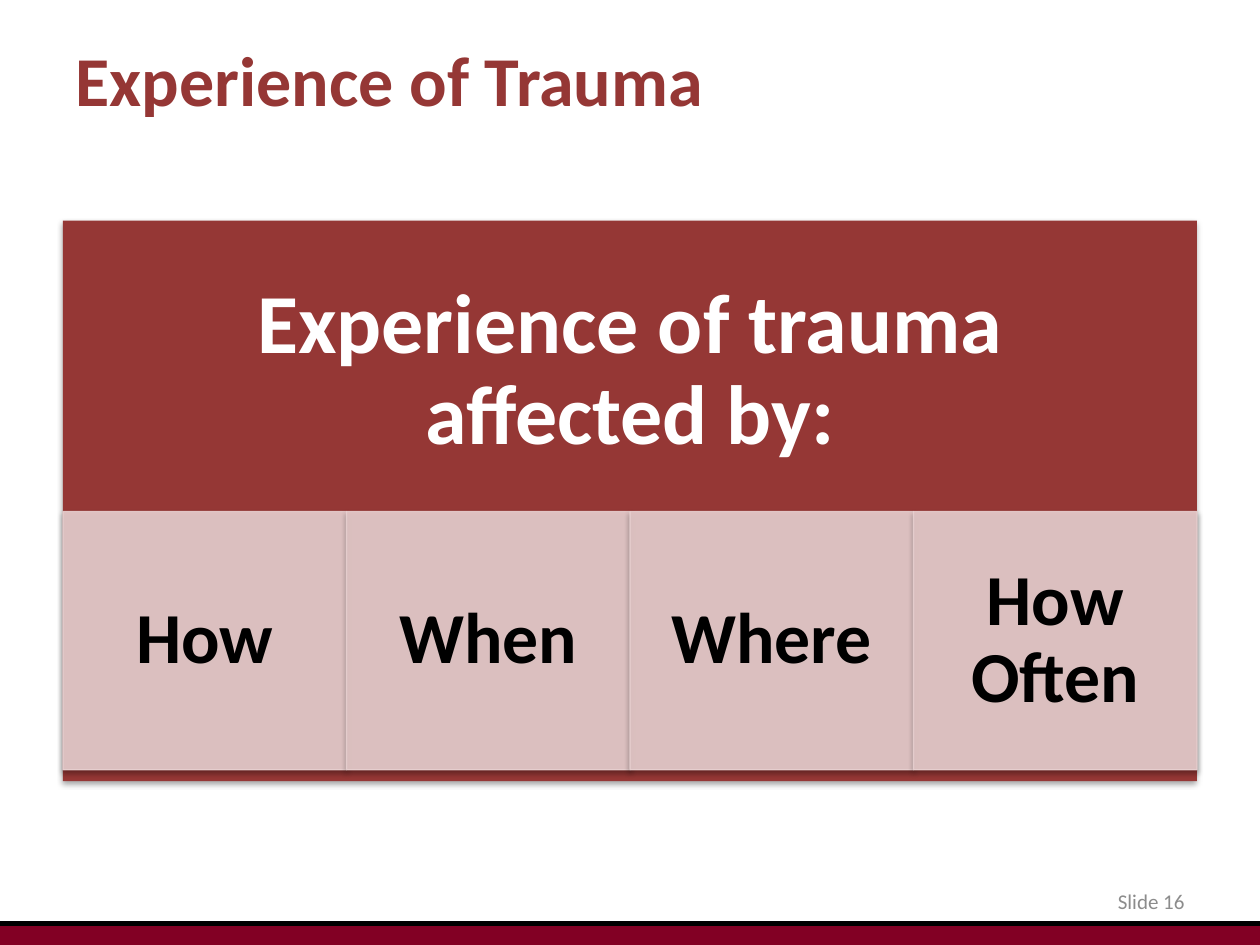
from dataclasses import dataclass

from lxml import etree
from pptx import Presentation
from pptx.dml.color import RGBColor
from pptx.enum.shapes import MSO_CONNECTOR, MSO_SHAPE
from pptx.enum.text import MSO_ANCHOR, PP_ALIGN
from pptx.oxml.ns import qn
from pptx.util import Emu, Pt

RECT = MSO_SHAPE.RECTANGLE
STRAIGHT = MSO_CONNECTOR.STRAIGHT
MIDDLE = MSO_ANCHOR.MIDDLE
LEFT, CENTER, RIGHT = PP_ALIGN.LEFT, PP_ALIGN.CENTER, PP_ALIGN.RIGHT
PX = 9144  # 100 px to the inch
TITLE_ONLY = 5


@dataclass(frozen=True)
class Theme:
    font: str = "Calibri"
    red: str = "953735"
    pink: str = "E8D0D0"
    maroon: str = "820024"
    white: str = "FFFFFF"
    black: str = "000000"
    gray: str = "8C8C8C"
    title_pt: int = 40
    heading_pt: int = 48
    factor_pt: int = 41
    number_pt: int = 12


@dataclass(frozen=True)
class Box:
    left: int
    top: int
    width: int
    height: int

    def emu(self) -> list[Emu]:
        return [Emu(n * PX) for n in (self.left, self.top, self.width, self.height)]


@dataclass(frozen=True)
class TextStyle:
    size: int
    color: str
    bold: bool = True
    align: PP_ALIGN = CENTER
    spacing: float = 0.9
    inset_x: int = 10
    inset_y: int = 5


THEME = Theme()
TITLE = TextStyle(THEME.title_pt, THEME.red, align=LEFT, spacing=1.0)
HEADING = TextStyle(THEME.heading_pt, THEME.white, inset_x=37, inset_y=37)
FACTOR = TextStyle(THEME.factor_pt, THEME.black, inset_x=32, inset_y=6)
NUMBER = TextStyle(THEME.number_pt, THEME.gray, bold=False, align=RIGHT, spacing=1.0)

PANEL = Box(50, 175, 900, 445)
FACTORS = ("How", "When", "Where", "How Often")
FACTOR_TOP, FACTOR_HEIGHT = 406, 205
FOOTER = Box(0, 733, 1000, 17)


def write(sp, text: str, style: TextStyle) -> None:
    tf = sp.text_frame
    tf.text = text
    tf.word_wrap = True
    tf.vertical_anchor = MIDDLE
    tf.margin_left = tf.margin_right = Emu(style.inset_x * PX)
    tf.margin_top = tf.margin_bottom = Emu(style.inset_y * PX)
    p = tf.paragraphs[0]
    p.alignment = style.align
    p.line_spacing = style.spacing
    font = p.runs[0].font
    font.name, font.size, font.bold = THEME.font, Pt(style.size), style.bold
    font.color.rgb = RGBColor.from_string(style.color)


def add_text(slide, box: Box, text: str, style: TextStyle) -> None:
    write(slide.shapes.add_textbox(*box.emu()), text, style)


def add_rect(slide, box: Box, color: str):
    sp = slide.shapes.add_shape(RECT, *box.emu())
    sp.shadow.inherit = False
    sp.fill.solid()
    sp.fill.fore_color.rgb = RGBColor.from_string(color)
    sp.line.fill.background()
    return sp


def set_alpha(sp, percent: int) -> None:
    """Make the fill and line colours partly transparent."""
    for clr in sp.element.spPr.iter(qn("a:srgbClr")):
        etree.SubElement(clr, qn("a:alpha"), val=str(percent * 1000))


def add_shadow(sp) -> None:
    effects = sp.element.spPr.find(qn("a:effectLst"))
    shadow = etree.SubElement(effects, qn("a:outerShdw"), blurRad=str(Pt(3.1)),
                              dist=str(Pt(1.8)), dir="5400000", rotWithShape="0")
    clr = etree.SubElement(shadow, qn("a:srgbClr"), val=THEME.black)
    etree.SubElement(clr, qn("a:alpha"), val="35000")


def add_factor(slide, box: Box, text: str) -> None:
    sp = add_rect(slide, box, THEME.pink)
    sp.line.color.rgb = RGBColor.from_string(THEME.pink)
    sp.line.width = Pt(0.75)
    set_alpha(sp, 90)
    add_shadow(sp)
    write(sp, text, FACTOR)


def add_footer(slide) -> None:
    add_rect(slide, FOOTER, THEME.maroon)
    left, top, width, _ = FOOTER.emu()
    line = slide.shapes.add_connector(STRAIGHT, left, top, left + width, top)
    line.line.color.rgb = RGBColor.from_string(THEME.black)
    line.line.width = Pt(3)
    etree.SubElement(line.element.spPr, qn("a:effectLst"))
    add_text(slide, Box(717, 695, 233, 40), "Slide 16", NUMBER)


def main() -> None:
    prs = Presentation()
    prs.slide_width, prs.slide_height = Emu(1000 * PX), Emu(750 * PX)
    slide = prs.slides.add_slide(prs.slide_layouts[TITLE_ONLY])

    title = slide.shapes.title
    title.left, title.top, title.width, title.height = Box(50, 0, 900, 125).emu()
    write(title, "Experience of Trauma", TITLE)

    add_shadow(add_rect(slide, PANEL, THEME.red))
    add_text(slide, Box(PANEL.left, PANEL.top, PANEL.width, 240),
             "Experience of trauma affected by:", HEADING)
    width = PANEL.width // len(FACTORS)
    for i, text in enumerate(FACTORS):
        add_factor(slide, Box(PANEL.left + i * width, FACTOR_TOP, width, FACTOR_HEIGHT), text)

    add_footer(slide)
    prs.save("out.pptx")


if __name__ == "__main__":
    main()
